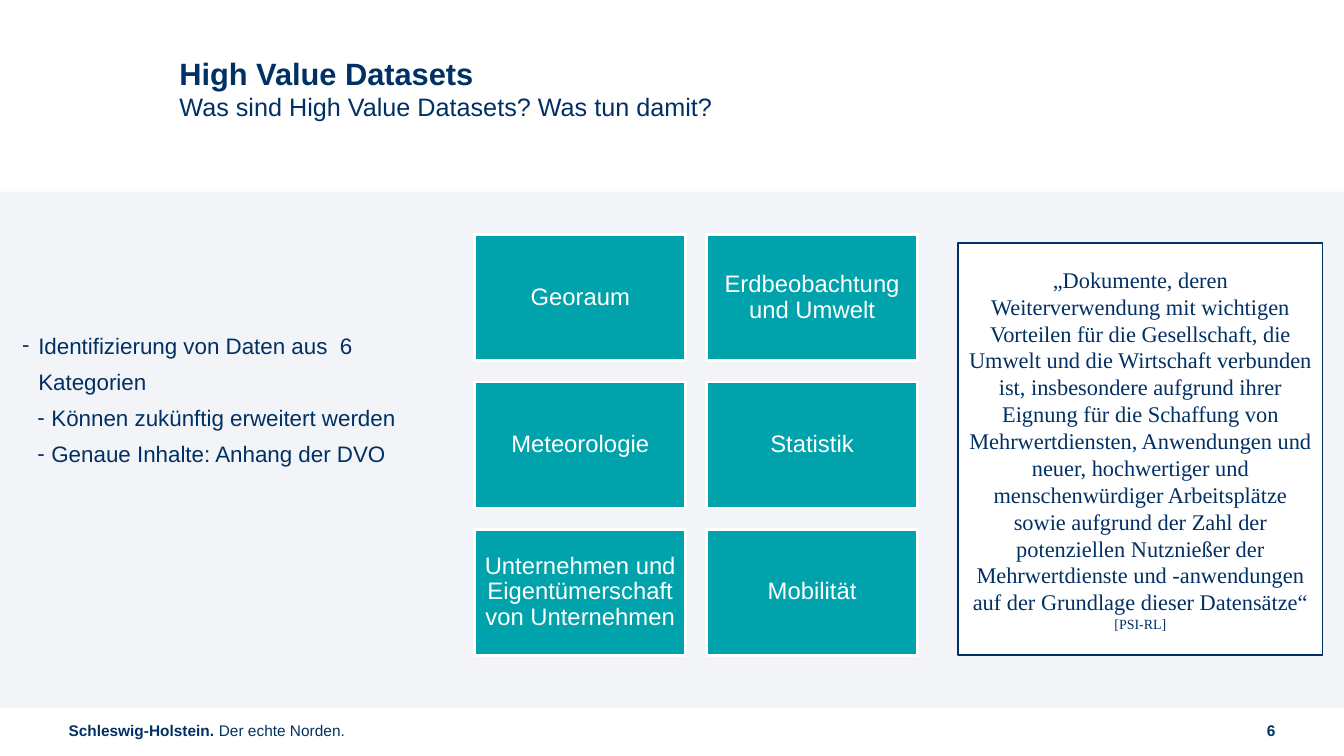
from dataclasses import dataclass
from itertools import product

from lxml.etree import SubElement
from pptx import Presentation
from pptx.dml.color import RGBColor
from pptx.enum.shapes import MSO_SHAPE
from pptx.enum.text import MSO_ANCHOR, PP_ALIGN
from pptx.oxml.ns import qn
from pptx.util import Inches, Pt

NAVY = "003064"
TEAL = "00A2AB"
WHITE = "FFFFFF"
PALE = "F2F4F7"


@dataclass
class Run:
    text: str
    size: float = 16
    bold: bool = False
    color: str = NAVY
    face: str = "Arial"
    broken: bool = False


@dataclass
class Para:
    runs: list[Run]
    align: PP_ALIGN = PP_ALIGN.LEFT
    space: float = 1.0
    left: float = 0
    hang: float = 0


@dataclass
class Box:
    left: float
    top: float
    width: float
    height: float
    paras: list[Para]
    fill: str = ""
    line: str = ""
    weight: float = 1
    inset: float = 0
    inset_y: float = 0
    anchor: MSO_ANCHOR = MSO_ANCHOR.MIDDLE


def paint(target, color: str) -> None:
    if color:
        target.solid()
        target.fore_color.rgb = RGBColor.from_string(color)
    else:
        target.background()


def apply(target, values: dict) -> None:
    for name, value in values.items():
        setattr(target, name, value)


def write(para, data: Para) -> None:
    if data.hang:
        props = para._p.get_or_add_pPr()
        props.set("marL", str(Inches(data.left)))
        props.set("indent", str(-Inches(data.hang)))
        SubElement(props, qn("a:buFont"), typeface="Arial")
        SubElement(props, qn("a:buChar"), char="-")
    apply(para, {"alignment": data.align, "line_spacing": data.space})
    for item in data.runs:
        if item.broken:
            para.add_line_break()
        run = para.add_run()
        run.text = item.text
        apply(run.font, {"size": Pt(item.size), "bold": item.bold, "name": item.face})
        paint(run.font.fill, item.color)


def draw(slide, box: Box) -> None:
    place = [Inches(n) for n in (box.left, box.top, box.width, box.height)]
    if box.fill:
        shape = slide.shapes.add_shape(MSO_SHAPE.RECTANGLE, *place)
        shape.shadow.inherit = False
        paint(shape.fill, box.fill)
        paint(shape.line.fill, box.line)
        if box.line:
            shape.line.width = Pt(box.weight)
    else:
        shape = slide.shapes.add_textbox(*place)
    frame = shape.text_frame
    side, edge = Inches(box.inset), Inches(box.inset_y)
    apply(frame, {
        "word_wrap": True,
        "vertical_anchor": box.anchor,
        "margin_left": side,
        "margin_right": side,
        "margin_top": edge,
        "margin_bottom": edge,
    })
    for count, data in enumerate(box.paras):
        write(frame.add_paragraph() if count else frame.paragraphs[0], data)


QUOTE = (
    "„Dokumente, deren Weiterverwendung mit wichtigen Vorteilen für die "
    "Gesellschaft, die Umwelt und die Wirtschaft verbunden ist, insbesondere "
    "aufgrund ihrer Eignung für die Schaffung von Mehrwertdiensten, Anwendungen "
    "und neuer, hochwertiger und menschenwürdiger Arbeitsplätze sowie aufgrund "
    "der Zahl der potenziellen Nutznießer der Mehrwertdienste und -anwendungen "
    "auf der Grundlage dieser Datensätze“"
)
THEMES = [
    "Georaum", "Erdbeobachtung und Umwelt",
    "Meteorologie", "Statistik",
    "Unternehmen und Eigentümerschaft von Unternehmen", "Mobilität",
]
POINTS = [
    ("Identifizierung von Daten aus  6 Kategorien", 0.16, 0.16),
    ("Können zukünftig erweitert werden", 0.29, 0.14),
    ("Genaue Inhalte: Anhang der DVO", 0.29, 0.14),
]


def tile(theme: str, row: int, col: int) -> Box:
    label = Para([Run(theme, 17, color=WHITE)], PP_ALIGN.CENTER, 0.9)
    return Box(4.71 + 2.3 * col, 2.33 + 1.46 * row, 2.09, 1.25, [label],
               TEAL, WHITE, 2, 0.07, 0.07)


def main() -> None:
    deck = Presentation()
    apply(deck, {"slide_width": Inches(13.33), "slide_height": Inches(7.5)})
    slide = deck.slides.add_slide(deck.slide_layouts[6])
    title = Para([
        Run("High Value Datasets", 22, True),
        Run("Was sind High Value Datasets? Was tun damit?", 18, broken=True),
    ])
    motto = Para([Run("Schleswig-Holstein.", 11, True), Run(" Der echte Norden.", 11)])
    number = Para([Run("6", 11, True)], PP_ALIGN.RIGHT)
    points = [Para([Run(text)], space=1.35, left=left, hang=hang)
              for text, left, hang in POINTS]
    quote = [Para([Run(text, size, face="Times New Roman")], PP_ALIGN.CENTER)
             for text, size in ((QUOTE, 16), ("[PSI-RL]", 10))]
    boxes = [
        Box(0, 1.9, 13.33, 5.12, [], PALE),
        Box(0.68, 7.1, 4.3, 0.29, [motto]),
        Box(11.6, 7.1, 1.05, 0.29, [number]),
        Box(1.78, 0.54, 8.74, 0.81, [title], anchor=MSO_ANCHOR.TOP),
        Box(0.22, 3.2, 4.33, 1.5, points, anchor=MSO_ANCHOR.TOP),
        *(tile(theme, row, col)
          for theme, (row, col) in zip(THEMES, product(range(3), range(2)))),
        Box(9.5, 2.41, 3.62, 4.09, quote, WHITE, NAVY, 1, 0.1, 0.05),
    ]
    for box in boxes:
        draw(slide, box)
    deck.save("out.pptx")


if __name__ == "__main__":
    main()
